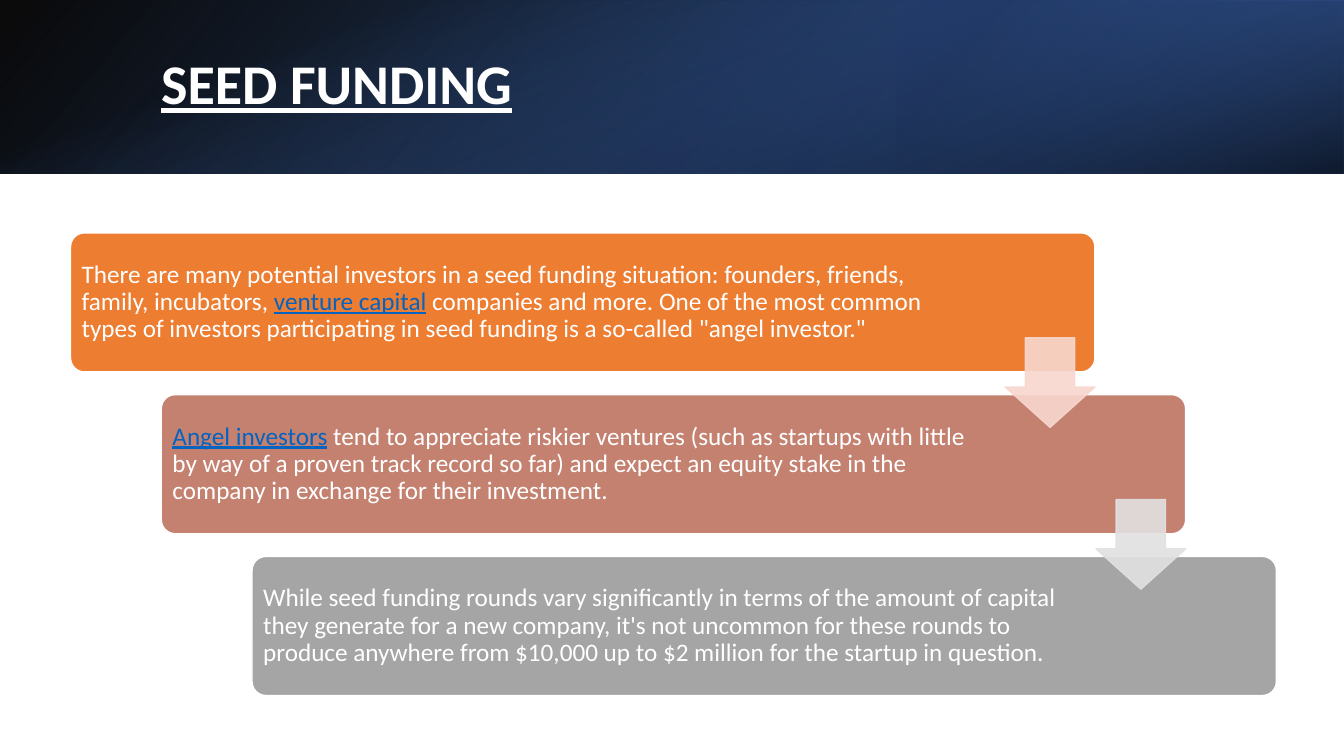
from lxml import etree
from pptx import Presentation
from pptx.dml.color import RGBColor
from pptx.enum import shapes, text
from pptx.oxml import ns
from pptx.util import Inches, Pt

WHITE = "FFFFFF"
LINK = "0563C1"


def colour(value):
    return RGBColor.from_string(value)


def set_opacity(shape, percents):
    for node, percent in zip(shape._element.spPr.xpath(".//a:srgbClr"), percents):
        etree.SubElement(node, ns.qn("a:alpha")).set("val", str(percent * 1000))


class SlideBuilder:
    font = "Calibri"

    def __init__(self, page):
        self.page = page

    def shape(self, kind, place, adjustments=()):
        shape = self.page.shapes.add_shape(kind, *map(Inches, place))
        shape.shadow.inherit = False
        for index, value in enumerate(adjustments):
            shape.adjustments[index] = value
        return shape

    def solid(self, kind, place, adjustments, fill, line):
        shape = self.shape(kind, place, adjustments)
        shape.fill.solid()
        shape.fill.fore_color.rgb = colour(fill)
        shape.line.color.rgb = colour(line)
        shape.line.width = Pt(1)
        return shape

    def band(self, place, stops, angle, rotation=0, flip=False):
        shape = self.shape(shapes.MSO_SHAPE.RECTANGLE, place)
        shape.line.fill.background()
        shape.rotation = rotation
        if flip:
            shape._element.spPr.xfrm.set("flipH", "1")
        shape.fill.gradient()
        shape.fill.gradient_angle = 360 - angle
        for stop, (position, value, _) in zip(shape.fill.gradient_stops, stops):
            stop.position = position / 100
            stop.color.rgb = colour(value)
        set_opacity(shape, [percent for _, _, percent in stops])

    def text(self, place, spans, size, inset=None):
        frame = self.page.shapes.add_textbox(*map(Inches, place)).text_frame
        frame.word_wrap = True
        frame.vertical_anchor = text.MSO_ANCHOR.MIDDLE
        if inset is not None:
            frame.margin_left = frame.margin_right = Inches(inset)
            frame.margin_top = frame.margin_bottom = Inches(inset)
        para = frame.paragraphs[0]
        para.line_spacing = 0.9
        para.font.name = self.font
        para.font.size = Pt(size)
        for words, value in spans:
            span = para.add_run()
            span.text = words
            span.font.color.rgb = colour(value)
            if value == LINK:
                span.font.underline = True
        return para

    def title(self, place, words):
        para = self.text(place, [(words, WHITE)], 40)
        para.font.bold = True
        para.runs[0].font.underline = True

    def card(self, left, top, text_width, fill, spans):
        self.solid(shapes.MSO_SHAPE.ROUNDED_RECTANGLE, (left, top, 10.16, 1.38),
                   [0.1], fill, WHITE)
        self.text((left + 0.04, top + 0.04, text_width, 1.3), spans, 18, 0.07)

    def arrow(self, left, top, fill):
        shape = self.solid(shapes.MSO_SHAPE.DOWN_ARROW, (left, top, 0.89, 0.89),
                           [0.55, 0.45], fill, fill)
        set_opacity(shape, [90, 90])


CARDS = [
    (8.67, "ED7D31", [
        ("There are many potential investors in a seed funding situation: founders, "
         "friends, family, incubators, ", WHITE),
        ("venture capital", LINK),
        (" companies and more. One of the most common types of investors participating "
         "in seed funding is a so-called \"angel investor.\"", WHITE)]),
    (8.29, "C48170", [
        ("Angel investors", LINK),
        (" tend to appreciate riskier ventures (such as startups with little by way of "
         "a proven track record so far) and expect an equity stake in the company in "
         "exchange for their investment.", WHITE)]),
    (8.29, "A5A5A5", [
        ("While seed funding rounds vary significantly in terms of the amount of capital "
         "they generate for a new company, it's not uncommon for these rounds to produce "
         "anywhere from $10,000 up to $2 million for the startup in question.", WHITE)]),
]
ARROW_FILLS = ["F8D7CE", "E1E1E1"]


def main():
    deck = Presentation()
    deck.slide_width, deck.slide_height = Inches(13.33), Inches(7.5)
    builder = SlideBuilder(deck.slides.add_slide(deck.slide_layouts[6]))

    builder.band((0, 0, 13.33, 1.72), [(0, "000000", 96), (100, "2F5597", 100)],
                 140, flip=True)
    builder.band((8.89, 0, 4.44, 1.72), [(19, "203864", 68), (100, "4472C4", 79)],
                 320, rotation=180, flip=True)
    builder.band((5.8, -5.8, 1.72, 13.33), [(23, "4472C4", 0), (99, "000000", 74)],
                 340, rotation=90)
    builder.title((1.5, 0.38, 10.98, 0.96), "SEED FUNDING")

    corners = [(0.7 + 0.9 * step, 2.31 + 1.605 * step) for step in range(len(CARDS))]
    for (left, top), card in zip(corners, CARDS):
        builder.card(left, top, *card)
    for (left, top), fill in zip(corners, ARROW_FILLS):
        builder.arrow(left + 9.27, top + 1.04, fill)

    deck.save("out.pptx")


if __name__ == "__main__":
    main()
